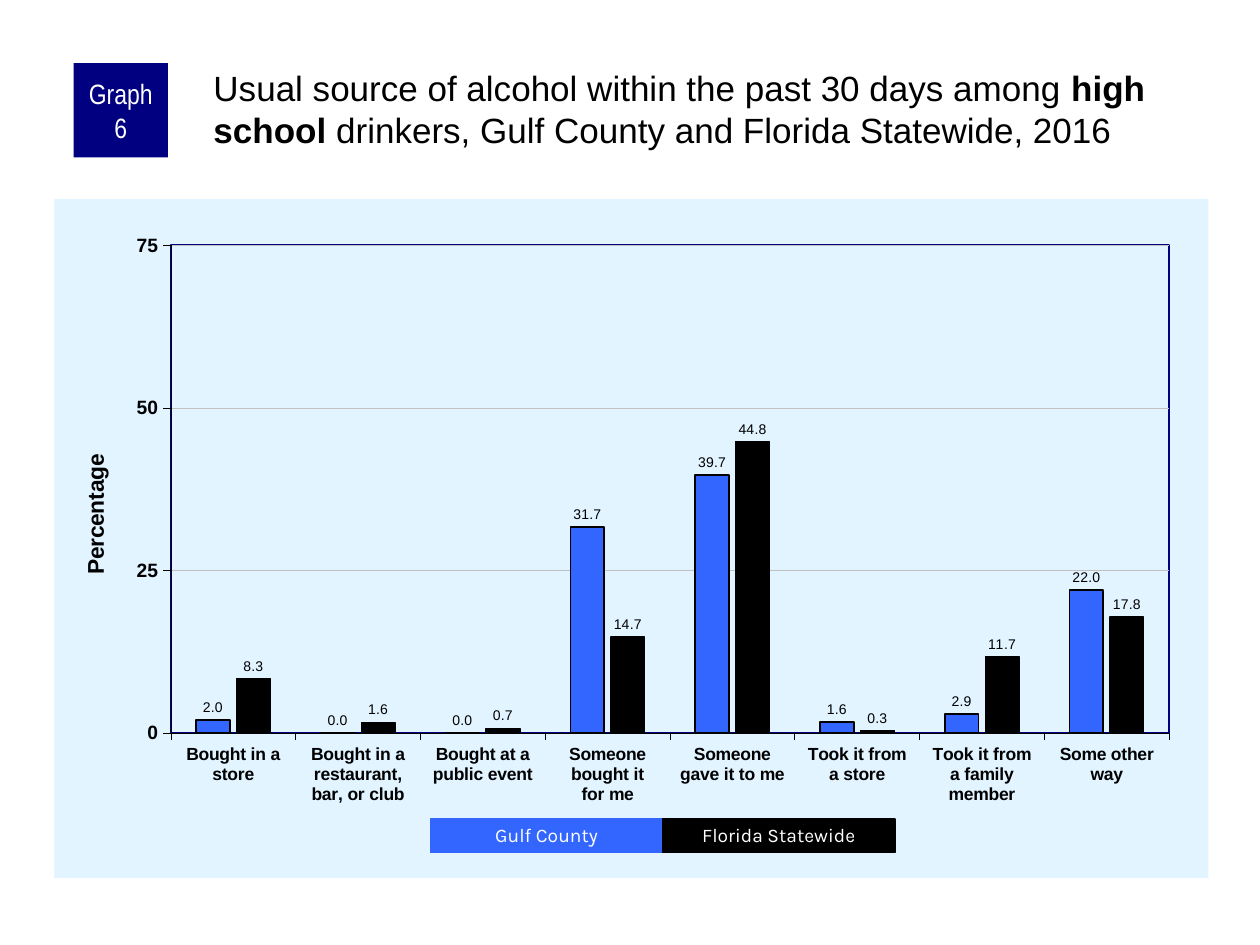
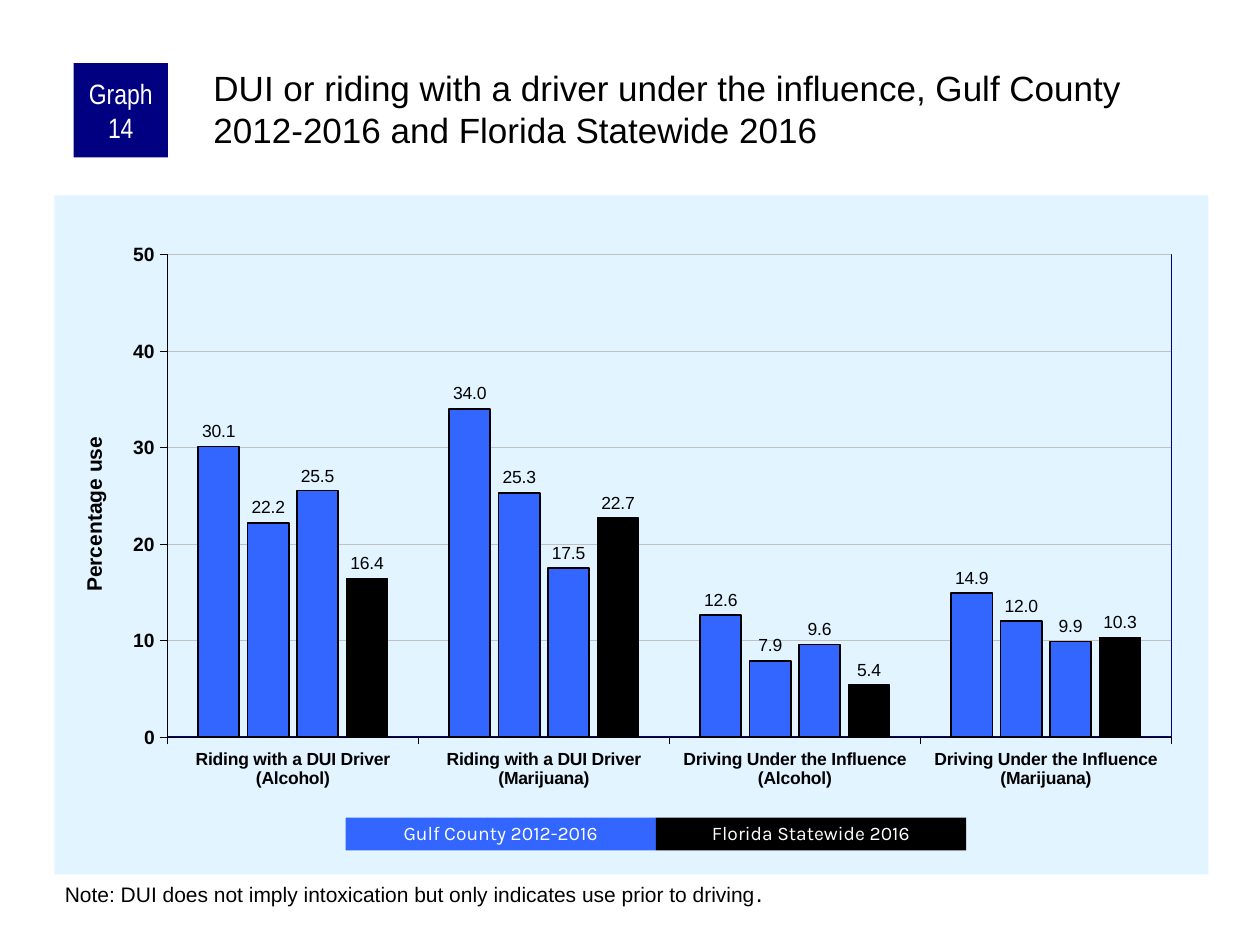
from lxml.etree import SubElement, fromstring
from pptx import Presentation
from pptx.chart.data import CategoryChartData
from pptx.dml.color import RGBColor
from pptx.enum.chart import XL_CHART_TYPE, XL_LABEL_POSITION, XL_TICK_MARK
from pptx.enum.shapes import MSO_SHAPE
from pptx.enum.text import MSO_ANCHOR, PP_ALIGN
from pptx.oxml.ns import nsdecls, qn
from pptx.util import Pt

NAVY, BLUE, BLACK, WHITE = "000080", "3366FF", "000000", "FFFFFF"
PANEL, GRID = "E1F4FF", "C0C0C0"


def color(hex_string):
    """Turn a hex string into a colour."""
    return RGBColor.from_string(hex_string)


def fill_properties(fill, line, width=0):
    """Build chart shape properties; None means no fill or no line."""
    def paint(value):
        return f'<a:solidFill><a:srgbClr val="{value}"/></a:solidFill>' if value else "<a:noFill/>"
    return fromstring(f'<c:spPr {nsdecls("c", "a")}>{paint(fill)}'
                      f'<a:ln w="{Pt(width)}">{paint(line)}</a:ln></c:spPr>')


def place(element, index, inner=False, **fractions):
    """Give a chart part a manual layout in fractions of the chart."""
    for old in element.findall(qn("c:layout")):
        element.remove(old)
    layout = fromstring(f'<c:layout {nsdecls("c")}/>')
    manual = SubElement(layout, qn("c:manualLayout"))
    if inner:
        SubElement(manual, qn("c:layoutTarget")).set("val", "inner")
    for key in ("x", "y"):
        SubElement(manual, qn(f"c:{key}Mode")).set("val", "edge")
    for key, value in fractions.items():
        SubElement(manual, qn(f"c:{key}")).set("val", str(value))
    element.insert(index, layout)


class GraphDeck:
    """Holds the shared style and the current slide."""

    def __init__(self):
        """Start an empty 10 by 7.5 inch deck."""
        self.deck = Presentation()
        self.deck.slide_width, self.deck.slide_height = Pt(720), Pt(540)
        self.page = None

    def start(self, number, *title):
        """Add a page with its graph number badge and title."""
        self.page = self.deck.slides.add_slide(self.deck.slide_layouts[6])
        self.block(f"Graph {number}", (42, 36, 54, 54), NAVY, 16, "Arial Narrow", (3.6, 0))
        self.text((120, 36, 570, 60), 20, title, (2, 2, 0, 0))

    def style(self, font, size, hex_string=BLACK, bold=False, name="Arial"):
        """Format a font."""
        font.name, font.size, font.bold = name, Pt(size), bold
        font.color.rgb = color(hex_string)

    def block(self, words, area, fill, size, font, insets=(7.2, 3.6), spacing=None, outline=False):
        """Add a filled rectangle with white centred text."""
        box = self.page.shapes.add_shape(MSO_SHAPE.RECTANGLE, *map(Pt, area))
        box.shadow.inherit = False
        box.fill.solid()
        box.fill.fore_color.rgb = color(fill)
        if outline:
            box.line.color.rgb, box.line.width = color(fill), Pt(0.75)
        else:
            box.line.fill.background()
        frame = box.text_frame
        frame.word_wrap, frame.vertical_anchor = True, MSO_ANCHOR.MIDDLE
        frame.margin_left = frame.margin_right = Pt(insets[0])
        frame.margin_top = frame.margin_bottom = Pt(insets[1])
        frame.text = words
        para = frame.paragraphs[0]
        para.alignment, para.line_spacing = PP_ALIGN.CENTER, spacing
        self.style(para.runs[0].font, size, WHITE, name=font)

    def text(self, area, size, spans, insets=(7.2, 3.6, 7.2, 3.6)):
        """Add a text box; each span is words, or words with size and bold."""
        frame = self.page.shapes.add_textbox(*map(Pt, area)).text_frame
        frame.word_wrap = True
        frame.margin_left, frame.margin_top, frame.margin_right, frame.margin_bottom = map(Pt, insets)
        for item in spans:
            words, span_size, bold = (item, size, False) if isinstance(item, str) else item
            span = frame.paragraphs[0].add_run()
            span.text = words
            self.style(span.font, span_size, bold=bold)

    def legend(self, left, top, width, height, names, outline=False):
        """Add a row of adjoining legend blocks."""
        for index, (name, fill) in enumerate(zip(names, (BLUE, BLACK))):
            self.block(name, (left + index * width, top, width, height), fill, 11, "Karla",
                       spacing=0.9, outline=outline)

    def axis(self, axis, size):
        """Style the labels, ticks and line of an axis."""
        self.style(axis.tick_labels.font, size, bold=True)
        axis.major_tick_mark, axis.minor_tick_mark = XL_TICK_MARK.OUTSIDE, XL_TICK_MARK.NONE
        axis.format.line.color.rgb, axis.format.line.width = color(BLACK), Pt(0.25)

    def columns(self, top, categories, series, scale, title, plot_area, label_size):
        """Add a clustered column chart on the pale panel."""
        data = CategoryChartData(number_format="0.0")
        data.categories = categories
        for index, (_, _, values) in enumerate(series, 1):
            data.add_series(f"Series {index}", values)
        chart = self.page.shapes.add_chart(XL_CHART_TYPE.COLUMN_CLUSTERED, Pt(31), Pt(top),
                                           Pt(659.5), Pt(388), data).chart
        chart.has_legend = chart.has_title = False
        self.style(chart.font, 11.5)
        body = chart.element.find(qn("c:chart"))
        body.addnext(fill_properties(PANEL, None))
        area = body.find(qn("c:plotArea"))
        area.append(fill_properties(None, NAVY, 1))
        place(area, 0, True, **dict(zip("xywh", plot_area)))

        self.axis(chart.category_axis, 10)
        axis = chart.value_axis
        self.axis(axis, 11)
        axis.minimum_scale, axis.maximum_scale, axis.major_unit = 0, *scale
        axis.tick_labels.number_format, axis.tick_labels.number_format_is_linked = "0", False
        grid = axis.major_gridlines.format.line
        grid.color.rgb, grid.width = color(GRID), Pt(0.25)
        words, size, left, upper = title
        axis.axis_title.text_frame.text = words
        self.style(axis.axis_title.text_frame.paragraphs[0].runs[0].font, size, bold=True)
        place(area.find(qn("c:valAx")).find(qn("c:title")), 1, x=left, y=upper)

        plot = chart.plots[0]
        plot.gap_width, plot.overlap, plot.vary_by_categories = 150, -20, False
        for bars, (fill, width, _) in zip(plot.series, series):
            bars.format.fill.solid()
            bars.format.fill.fore_color.rgb = color(fill)
            bars.format.line.color.rgb, bars.format.line.width = color(BLACK), Pt(width)
            bars.invert_if_negative = False
            labels = bars.data_labels
            labels.show_value, labels.position = True, XL_LABEL_POSITION.OUTSIDE_END
            labels.number_format, labels.number_format_is_linked = "0.0", False
            self.style(labels.font, label_size)


def main():
    """Build both graph pages."""
    graphs = GraphDeck()

    graphs.start(6, "Usual source of alcohol within the past 30 days among ",
                 ("high school", 20, True),
                 " drinkers, Gulf County and Florida Statewide, 2016")
    graphs.columns(
        113.8,
        ["Bought in a store", "Bought in a restaurant, bar, or club", "Bought at a public event",
         "Someone bought it\nfor me", "Someone\ngave it to me", "Took it from\na store",
         "Took it from\na family member", "Some other way"],
        [(BLUE, 1, (2, 0, 0, 31.7, 39.7, 1.6, 2.9, 22)),
         (BLACK, 0.75, (8.3, 1.6, 0.7, 14.7, 44.8, 0.3, 11.7, 17.8))],
        (75, 25), ("Percentage", 13, 0.02, 0.37), (0.101, 0.068, 0.865, 0.718), 8)
    graphs.legend(246, 468, 132.7, 19.4, ("Gulf County", "Florida Statewide"), outline=True)

    graphs.start(14, "DUI or riding with a driver under the influence, "
                     "Gulf County 2012-2016 and Florida Statewide 2016")
    graphs.columns(
        111.6,
        [f"{habit} ({drug})" for habit in ("Riding with a DUI Driver", "Driving Under the Influence")
         for drug in ("Alcohol", "Marijuana")],
        [(BLUE, 1, (30.1, 34, 12.6, 14.9)),
         (BLUE, 1, (22.2, 25.3, 7.9, 12)),
         (BLUE, 0.75, (25.5, 17.5, 9.6, 9.9)),
         (BLACK, 0.75, (16.4, 22.7, 5.4, 10.3))],
        (50, 10), ("Percentage use", 12, 0.02, 0.35), (0.098, 0.087, 0.87, 0.711), 10)
    graphs.text((30, 498.2, 660, 24.5), 12,
                ("Note: DUI does not imply intoxication but only indicates use prior to driving",
                 (".", 14, False)))
    graphs.legend(197.5, 467.3, 177.3, 18.7, ("Gulf County 2012-2016", "Florida Statewide 2016"))

    graphs.deck.save("out.pptx")


if __name__ == "__main__":
    main()
